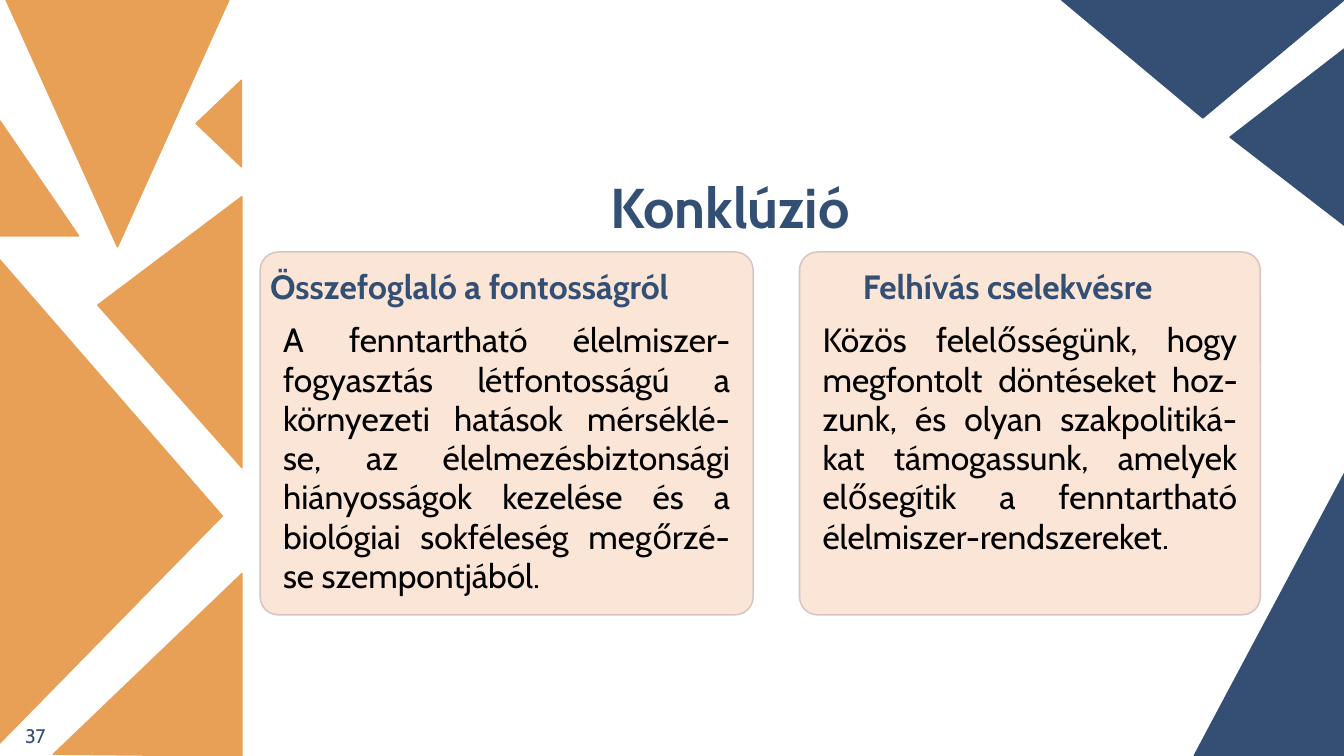
from pptx import Presentation
from pptx.dml.color import RGBColor
from pptx.enum.shapes import MSO_SHAPE
from pptx.enum.text import MSO_ANCHOR, PP_ALIGN
from pptx.util import Emu, Pt

TRIANGLE = MSO_SHAPE.ISOSCELES_TRIANGLE
ROUNDED = MSO_SHAPE.ROUNDED_RECTANGLE
TOP, MIDDLE = MSO_ANCHOR.TOP, MSO_ANCHOR.MIDDLE
LEFT, JUSTIFY = PP_ALIGN.LEFT, PP_ALIGN.JUSTIFY

PX = 9144
FONT = "Cabin"
ORANGE, BLUE, NAVY = "E89F56", "354F74", "344F74"
PEACH, ROSE, BLACK = "FBE5D6", "D7C5C1", "000000"

TITLE = "Konklúzió"
PAGE_NUMBER = "37"
CARDS = [
    {"left": 258, "width": 489, "heading_indent": 0,
     "heading": "Összefoglaló a fontosságról",
     "body": "A fenntartható élelmiszer-fogyasztás létfontosságú a környezeti "
             "hatások mérséklé-se, az élelmezésbiztonsági hiányosságok kezelése "
             "és a biológiai sokféleség megőrzé-se szempontjából."},
    {"left": 793, "width": 457, "heading_indent": 53,
     "heading": "Felhívás cselekvésre",
     "body": "Közös felelősségünk, hogy megfontolt döntéseket hoz-zunk, és olyan "
             "szakpolitiká-kat támogassunk, amelyek elősegítik a fenntartható "
             "élelmiszer-rendszereket."},
]
CARD_TOP, CARD_HEIGHT, BODY_MARGIN = 250, 360, 13
HEADING_TOP, HEADING_HEIGHT = 261, 38
BODY_TOP, BODY_HEIGHT = 313, 285

SHARDS = [
    ((-130, 387, 480, 221), 90, 0.53, ORANGE),
    ((34, 258, 269, 143), 270, 0.6, ORANGE),
    ((56, 566, 181, 187), 270, 0.01, ORANGE),
    ((-18, 138, 114, 78), 90, 1, ORANGE),
    ((6, 0, 221, 245), 180, 0.5, ORANGE),
    ((1053, 0, 280, 117), 180, 0.5, BLUE),
    ((1189, 79, 176, 114), 270, 0.5, BLUE),
    ((1119, 535, 280, 149), 270, 0, BLUE),
    ((174, 100, 86, 45), 270, 0.5, ORANGE),
]


def color(value):
    return RGBColor.from_string(value)


def emu(box):
    return [Emu(length * PX) for length in box]


def add_panel(slide, kind, box, adjustment, fill, line, line_width):
    panel = slide.shapes.add_shape(kind, *emu(box))
    panel.adjustments[0] = adjustment
    panel.shadow.inherit = False
    panel.fill.solid()
    panel.fill.fore_color.rgb = color(fill)
    panel.line.color.rgb = color(line)
    panel.line.width = Pt(line_width)
    return panel


def add_text(slide, box, text, size, ink, bold=False,
             align=LEFT, anchor=TOP, spacing=None):
    frame = slide.shapes.add_textbox(*emu(box)).text_frame
    frame.word_wrap = True
    frame.vertical_anchor = anchor
    paragraph = frame.paragraphs[0]
    paragraph.text = text
    paragraph.alignment = align
    if spacing:
        paragraph.line_spacing = Pt(spacing)
    paragraph.font.name = FONT
    paragraph.font.size = Pt(size)
    paragraph.font.bold = bold
    paragraph.font.color.rgb = color(ink)


def add_card(slide, card):
    left, width, indent = card["left"], card["width"], card["heading_indent"]
    add_panel(slide, ROUNDED, (left, CARD_TOP, width, CARD_HEIGHT),
              0.05, PEACH, ROSE, 1.09)
    add_text(slide, (left + indent, HEADING_TOP, width - indent, HEADING_HEIGHT),
             card["heading"], 24, NAVY, bold=True, spacing=27.3)
    add_text(slide, (left + BODY_MARGIN, BODY_TOP, width - 2 * BODY_MARGIN, BODY_HEIGHT),
             card["body"], 24, BLACK, align=JUSTIFY, spacing=28)


def main():
    deck = Presentation()
    deck.slide_width, deck.slide_height = emu((1333, 750))
    slide = deck.slides.add_slide(deck.slide_layouts[6])
    for box, rotation, apex, fill in SHARDS:
        shard = add_panel(slide, TRIANGLE, box, apex, fill, fill, 1)
        shard.rotation = rotation
    add_text(slide, (15, 710, 300, 40), PAGE_NUMBER, 14, BLUE, anchor=MIDDLE)
    add_text(slide, (596, 157, 370, 76), TITLE, 40, NAVY, bold=True, spacing=54.7)
    for card in CARDS:
        add_card(slide, card)
    deck.save("out.pptx")


if __name__ == "__main__":
    main()
